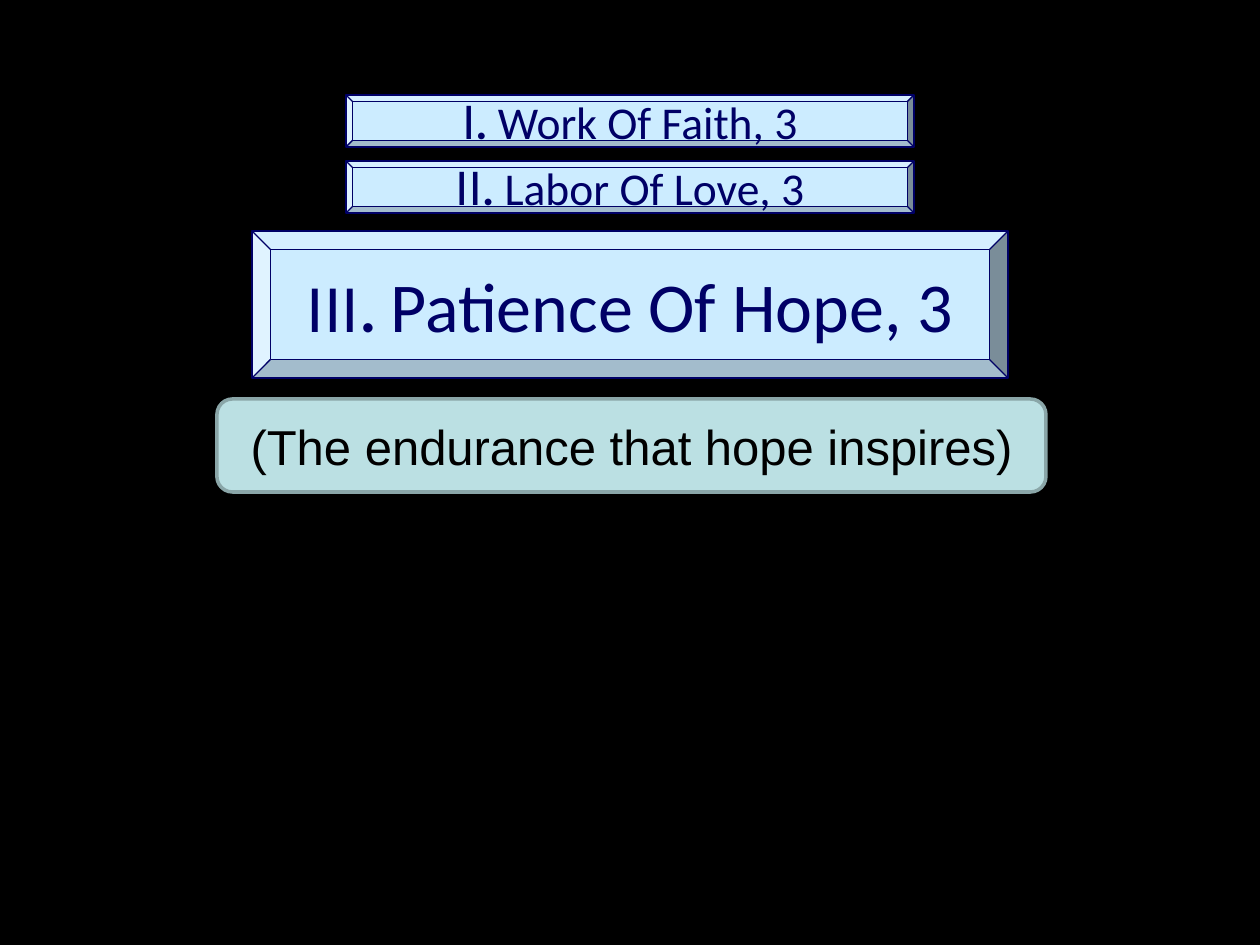
import pptx
import pptx.util
import pptx.dml.color
import pptx.enum.shapes
import pptx.enum.text

PX = 914400 / 126
NAVY = "000066"
SHAPES = pptx.enum.shapes.MSO_SHAPE


def px(n):
    return pptx.util.Emu(round(n * PX))


def rgb(value):
    return pptx.dml.color.RGBColor.from_string(value)


def add_box(s, kind, box, fill, line, weight, wrap):
    sp = s.shapes.add_shape(kind, *map(px, box))
    sp.shadow.inherit = False
    sp.fill.solid()
    sp.fill.fore_color.rgb = rgb(fill)
    sp.line.color.rgb = rgb(line)
    sp.line.width = pptx.util.Pt(weight)
    tf = sp.text_frame
    tf.word_wrap = wrap
    tf.vertical_anchor = pptx.enum.text.MSO_ANCHOR.MIDDLE
    p = tf.paragraphs[0]
    p.alignment = pptx.enum.text.PP_ALIGN.CENTER
    return p


def add_run(p, text, size, font, color, bold=False):
    r = p.add_run()
    r.text = text
    r.font.size = pptx.util.Pt(size)
    r.font.name = font
    r.font.bold = bold
    r.font.color.rgb = rgb(color)


def add_heading(s, box, numeral, title, sizes):
    p = add_box(s, SHAPES.BEVEL, box, "CCECFF", NAVY, 0.75, False)
    add_run(p, numeral, sizes[0], "DejaVu Sans", NAVY)
    add_run(p, ". ", sizes[1], "Calibri", NAVY, True)
    add_run(p, title, sizes[2], "Calibri", NAVY)


def add_caption(s, box, text):
    p = add_box(s, SHAPES.ROUNDED_RECTANGLE, box, "BBE0E3", "8AA6A8", 2, True)
    add_run(p, text, 28, "Arial", "000000")


def main():
    prs = pptx.Presentation()
    prs.slide_width, prs.slide_height = px(1260), px(945)
    s = prs.slides.add_slide(prs.slide_layouts[6])
    s.background.fill.solid()
    s.background.fill.fore_color.rgb = rgb("000000")

    small, large = (26, 26, 26), (34, 36, 40)
    add_heading(s, (346, 95, 568, 52), "I", "Work Of Faith, 3", small)
    add_caption(s, (217, 399, 829, 93), "(The endurance that hope inspires)")
    add_heading(s, (252, 231, 756, 147), "III", "Patience Of Hope, 3", large)
    add_heading(s, (346, 161, 568, 52), "II", "Labor Of Love, 3", small)
    prs.save("out.pptx")


if __name__ == "__main__":
    main()
